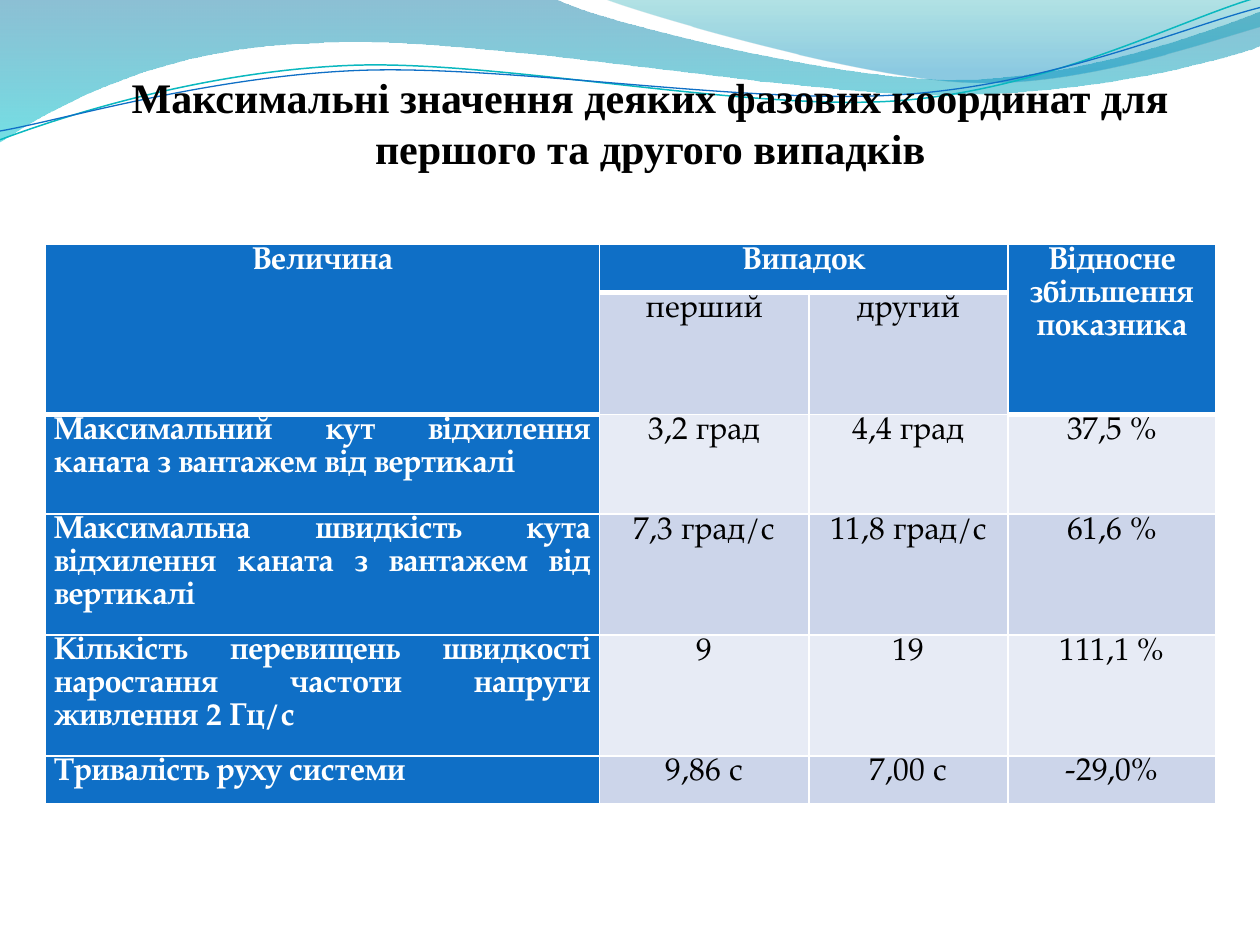
from lxml import etree
from pptx import Presentation
from pptx.dml.color import RGBColor
from pptx.enum import text
from pptx.oxml import ns
from pptx.util import Inches, Pt

theme = {
    "accent": "0F6FC6", "white": "FFFFFF", "black": "000000",
    "bands": ["E7EBF5", "CCD5EA"], "teal": "0AB8BF",
    "title_font": "Times New Roman", "title_size": 24,
    "table_font": "TeX Gyre Pagella", "table_size": 18,
}

prs = Presentation()
prs.slide_width, prs.slide_height = Inches(10), Inches(7.5)
slide = prs.slides.add_slide(prs.slide_layouts[5])


def add_wave(segments, close):
    corners = [(Inches(segment[i]), Inches(segment[i + 1]))
               for segment in segments for i in range(0, len(segment), 2)]
    builder = slide.shapes.build_freeform(*corners[0], scale=1.0)
    builder.add_line_segments(corners[1:], close=close)
    wave = builder.convert_to_shape()
    wave.shadow.inherit = False
    steps = iter(list(wave._element.spPr.iter(ns.qn("a:lnTo"))))
    for segment in segments[1:]:
        step = next(steps)
        if len(segment) == 6:
            step.tag = ns.qn("a:cubicBezTo")
            for control in (next(steps), next(steps)):
                step.append(control[0])
                control.getparent().remove(control)
    return wave


def format_text(frame, alignment, spacing, font_format):
    paragraph = frame.paragraphs[0]
    paragraph.alignment = alignment
    paragraph.line_spacing = spacing
    font = paragraph.runs[0].font
    for name, value in font_format.items():
        if name == "color":
            font.color.rgb = RGBColor.from_string(value)
        else:
            setattr(font, name, value)


bands = [
    ([(0, 0), (4.4, -0.01), (4.76, 0.17, 6.64, 0.63, 7.58, 0.63),
      (8.53, 0.63, 9.58, 0.26, 10, 0.09), (10.01, 0.36),
      (9.83, 0.44, 8.7, 0.76, 7.46, 0.75), (6.22, 0.75, 3.82, 0.28, 2.57, 0.34),
      (1.29, 0.36, 0.46, 0.83, -0.01, 1.13), (0, 0)],
     [(0, "0074A1", 45), (1, "00C6CF", 55)]),
    ([(4.79, -0.01), (5.09, 0.11, 6.82, 0.62, 7.69, 0.65),
      (8.56, 0.69, 9.61, 0.32, 10, 0.21), (10, 0), (4.79, -0.01)],
     [(0, "00A1A9", 30), (0.8, "008BBF", 45)]),
]
for outline, gradient in bands:
    band = add_wave(outline, True)
    band.line.fill.background()
    band.fill.gradient()
    band.fill.gradient_angle = 270
    for stop, (position, color, opacity) in zip(band.fill.gradient_stops, gradient):
        stop.position = position
        stop.color.rgb = RGBColor.from_string(color)
    for tint, (position, color, opacity) in zip(band._element.spPr.iter(ns.qn("a:srgbClr")), gradient):
        etree.SubElement(tint, ns.qn("a:alpha"), val=str(opacity * 1000))

strands = [
    ([(0, 1.11), (0.48, 0.93, 1.58, 0.57, 2.77, 0.52),
      (3.95, 0.47, 5.93, 0.89, 7.13, 0.8), (8.33, 0.71, 9.38, 0.15, 9.98, -0.02)],
     theme["teal"], 0.85),
    ([(0, 1.04), (0.47, 0.96, 1.64, 0.61, 2.83, 0.56),
      (4.03, 0.51, 5.97, 0.84, 7.17, 0.75), (8.36, 0.67, 9.41, 0.21, 10, 0.06)],
     theme["accent"], 0.75),
]
for outline, color, width in strands:
    strand = add_wave(outline, False)
    strand.fill.background()
    strand.line.color.rgb = RGBColor.from_string(color)
    strand.line.width = Pt(width)

heading = slide.shapes.title
slide.shapes._spTree.append(heading._element)
heading_box = {"left": 0.67, "top": 0.52, "width": 8.98, "height": 0.91}
for name, value in heading_box.items():
    setattr(heading, name, Inches(value))
heading.text_frame.text = "Максимальні значення деяких фазових координат для першого та другого випадків"
frame_format = {"word_wrap": True, "auto_size": text.MSO_AUTO_SIZE.NONE,
                "vertical_anchor": text.MSO_ANCHOR.TOP}
for name, value in frame_format.items():
    setattr(heading.text_frame, name, value)
format_text(heading.text_frame, text.PP_ALIGN.CENTER, 1.0, {
    "name": theme["title_font"], "size": Pt(theme["title_size"]),
    "bold": True, "color": theme["black"]})

rows = [
    ["Величина", "Випадок", "", "Відносне збільшення показника"],
    ["", "перший", "другий", ""],
    ["Максимальний кут відхилення каната з вантажем від вертикалі", "3,2 град", "4,4 град", "37,5 %"],
    ["Максимальна швидкість кута відхилення каната з вантажем від вертикалі",
     "7,3 град/с", "11,8 град/с", "61,6 %"],
    ["Кількість перевищень швидкості наростання частоти напруги живлення 2 Гц/с", "9", "19", "111,1 %"],
    ["Тривалість руху системи", "9,86 с", "7,00 с", "-29,0%"],
]
column_widths = [4.4, 1.66, 1.58, 1.65]
row_heights = [0.38, 0.97, 0.79, 0.96, 0.96, 0.38]
results = slide.shapes.add_table(
    len(rows), len(column_widths), Inches(0.36), Inches(1.94),
    Inches(sum(column_widths)), Inches(sum(row_heights))).table
for column, width in zip(results.columns, column_widths):
    column.width = Inches(width)
for row, height in zip(results.rows, row_heights):
    row.height = Inches(height)
for first, last in [((0, 0), (1, 0)), ((0, 1), (0, 2)), ((0, 3), (1, 3))]:
    results.cell(*first).merge(results.cell(*last))

thick_bottoms = {(0, 0), (0, 1), (0, 2), (0, 3), (1, 0), (1, 3)}
cell_format = {"margin_left": Inches(0.07), "margin_right": Inches(0.07),
               "margin_top": 0, "margin_bottom": 0}
for r, row in enumerate(rows):
    for c, words in enumerate(row):
        cell = results.cell(r, c)
        for name, value in cell_format.items():
            setattr(cell, name, value)
        borders = {"lnL": 1, "lnR": 1, "lnT": 3 if (r - 1, c) in thick_bottoms else 1,
                   "lnB": 3 if (r, c) in thick_bottoms else 1}
        for side, width in borders.items():
            border = etree.SubElement(cell._tc.get_or_add_tcPr(), ns.qn("a:" + side), w=str(Pt(width)))
            border_fill = etree.SubElement(border, ns.qn("a:solidFill"))
            etree.SubElement(border_fill, ns.qn("a:srgbClr"), val=theme["white"])
        is_header = r == 0 or c == 0 or (r, c) == (1, 3)
        cell.fill.solid()
        cell.fill.fore_color.rgb = RGBColor.from_string(
            theme["accent"] if is_header else theme["bands"][r % 2])
        if words:
            cell.text = words
            justified = c == 0 and r > 1
            alignment = text.PP_ALIGN.JUSTIFY if justified else text.PP_ALIGN.CENTER
            format_text(cell.text_frame, alignment, 1.07, {
                "name": theme["table_font"], "size": Pt(theme["table_size"]), "bold": is_header,
                "color": theme["white"] if is_header else theme["black"]})

prs.save("out.pptx")
